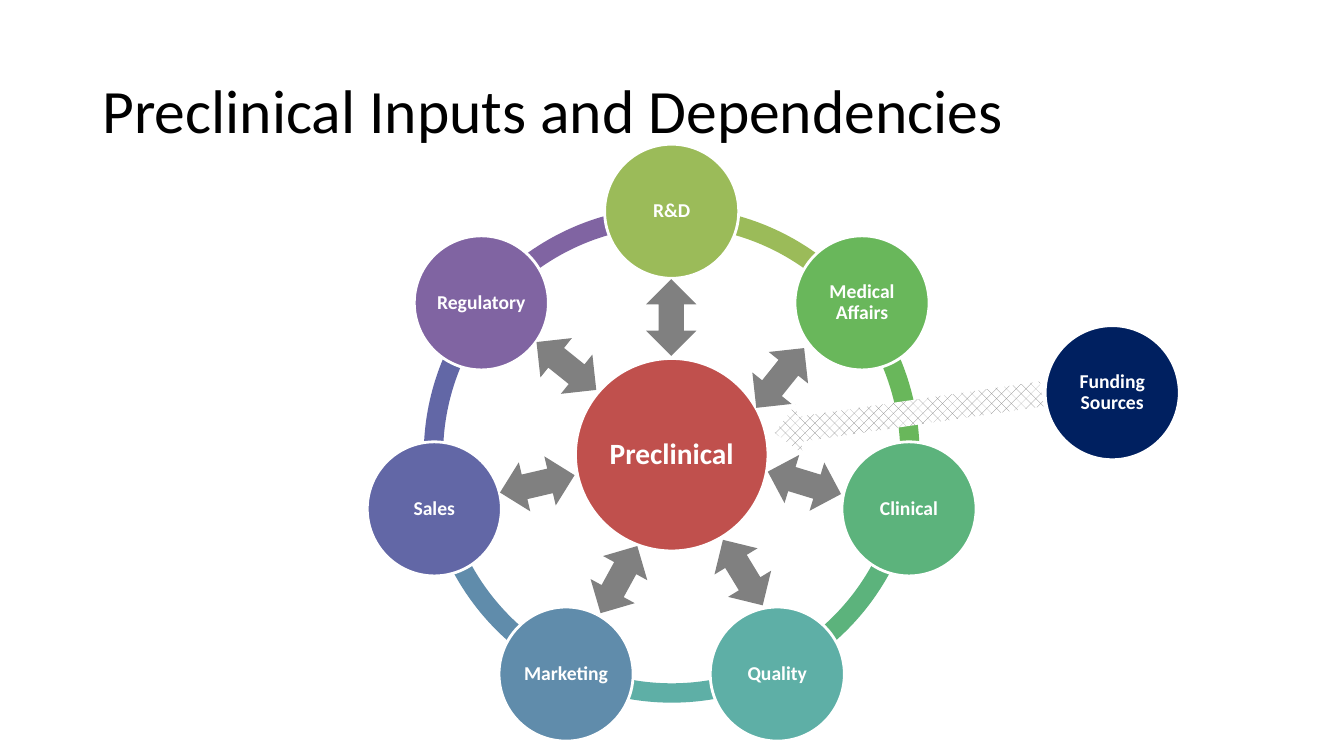
import math

from pptx import Presentation
from pptx import util as u
from pptx.dml import color
from pptx.enum import dml, shapes, text

CENTRE = (479.8, 324.8)
RING_SIZE = 354.2
ORBIT = 173.9
HUB_SIZE = 137.5
NODE_SIZE = 95.8
NODES = [
    ("R&D", "9BBB59"),
    ("Medical Affairs", "69B75B"),
    ("Clinical", "5CB37C"),
    ("Quality", "5EAFA6"),
    ("Marketing", "608CAB"),
    ("Sales", "6267A6"),
    ("Regulatory", "8064A2"),
]
STEP = 360 / len(NODES)
LINK_ARROWS = [
    (479.5, 226.8, 0),
    (404.6, 261.4, 308.7),
    (557.3, 270, 38.7),
    (442.1, 414, 208.7),
    (574.6, 344.9, 287),
    (530.6, 409, 328.7),
    (383.8, 345.6, 256.9),
]


def rgb(value):
    return color.RGBColor.from_string(value)


def apply(target, values):
    for name, value in values.items():
        setattr(target, name, value)


def add_centred(slide, kind, centre, width, height, fill=None):
    left, top = centre[0] - width / 2, centre[1] - height / 2
    shape = slide.shapes.add_shape(
        kind, u.Pt(left), u.Pt(top), u.Pt(width), u.Pt(height))
    shape.shadow.inherit = False
    shape.line.fill.background()
    if fill:
        shape.fill.solid()
        shape.fill.fore_color.rgb = rgb(fill)
    return shape


def format_text(shape, words, size, hue, bold, align, inset_x, inset_y):
    frame = shape.text_frame
    frame.text = words
    apply(frame, {
        "word_wrap": True,
        "auto_size": text.MSO_AUTO_SIZE.NONE,
        "vertical_anchor": text.MSO_ANCHOR.MIDDLE,
        "margin_left": u.Pt(inset_x),
        "margin_right": u.Pt(inset_x),
        "margin_top": u.Pt(inset_y),
        "margin_bottom": u.Pt(inset_y),
    })
    paragraph = frame.paragraphs[0]
    apply(paragraph, {"alignment": align, "line_spacing": 0.9})
    font = paragraph.runs[0].font
    apply(font, {"name": "Calibri", "size": u.Pt(size), "bold": bold})
    font.color.rgb = rgb(hue)


def add_title(slide, words):
    title = slide.shapes.title
    apply(title, {"left": u.Pt(66), "top": u.Pt(28.8),
                  "width": u.Pt(828), "height": u.Pt(104.4)})
    format_text(title, words, 44, "000000", False, text.PP_ALIGN.LEFT, 7.2, 3.6)


def add_arc(slide, index, fill):
    arc = add_centred(slide, shapes.MSO_SHAPE.BLOCK_ARC, CENTRE,
                      RING_SIZE, RING_SIZE, fill)
    for place, turn in enumerate((index, index + 1)):
        degrees = (270 + STEP * turn) % 360
        arc.adjustments[place] = degrees * 0.6
    arc.adjustments[2] = 0.039


def add_circle(slide, words, centre, diameter, fill, size):
    circle = add_centred(slide, shapes.MSO_SHAPE.OVAL, centre,
                         diameter, diameter, fill)
    circle.line.color.rgb = rgb("FFFFFF")
    circle.line.width = u.Pt(2)
    format_text(circle, words, size, "FFFFFF", True,
                text.PP_ALIGN.CENTER, 1.5, 1.5)


def add_link_arrow(slide, x, y, rotation):
    arrow = add_centred(slide, shapes.MSO_SHAPE.UP_DOWN_ARROW, (x, y),
                        36, 54.7, "808080")
    arrow.rotation = rotation


def add_funding_arrow(slide):
    arrow = add_centred(slide, shapes.MSO_SHAPE.UP_ARROW, (648.7, 295.2), 36, 193)
    arrow.rotation = 261.7
    arrow.fill.patterned()
    arrow.fill.pattern = dml.MSO_PATTERN.PERCENT_30
    arrow.fill.fore_color.rgb = rgb("808080")
    arrow.fill.back_color.rgb = rgb("FFFFFF")


def orbit_point(index):
    angle = math.radians(STEP * index)
    return (CENTRE[0] + ORBIT * math.sin(angle),
            CENTRE[1] - ORBIT * math.cos(angle))


def main():
    presentation = Presentation()
    apply(presentation, {"slide_width": u.Pt(960), "slide_height": u.Pt(540)})
    slide = presentation.slides.add_slide(presentation.slide_layouts[5])
    add_title(slide, "Preclinical Inputs and Dependencies")
    for index, (_, fill) in reversed(list(enumerate(NODES))):
        add_arc(slide, index, fill)
    add_circle(slide, "Preclinical", CENTRE, HUB_SIZE, "C0504D", 21)
    for index, (words, fill) in enumerate(NODES):
        add_circle(slide, words, orbit_point(index), NODE_SIZE, fill, 14)
    for x, y, rotation in LINK_ARROWS:
        add_link_arrow(slide, x, y, rotation)
    add_circle(slide, "Funding Sources", (794.5, 280.5), NODE_SIZE, "002060", 14)
    add_funding_arrow(slide)
    presentation.save("out.pptx")


if __name__ == "__main__":
    main()
